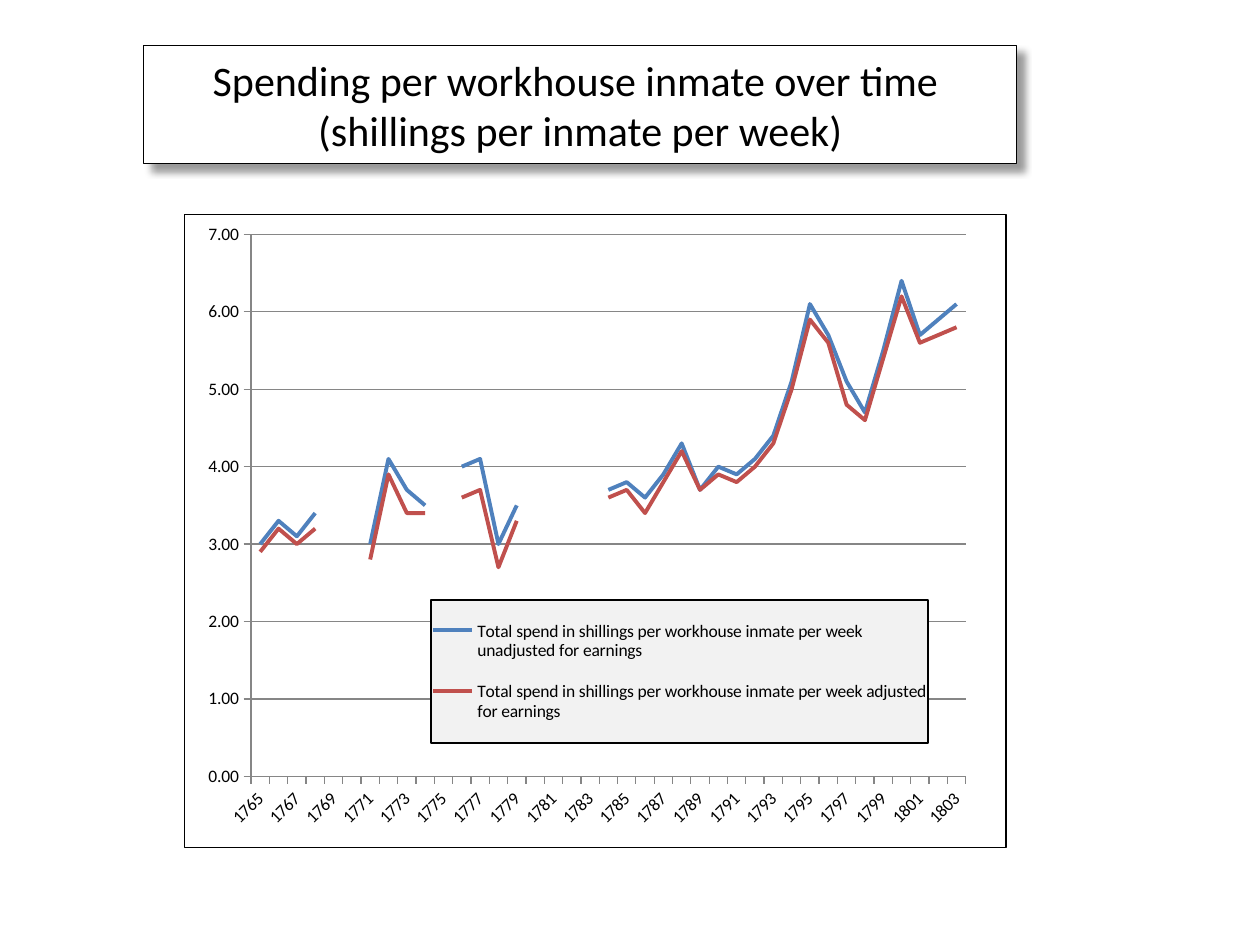
import lxml.etree
import pptx
import pptx.chart.data
import pptx.dml.color
import pptx.enum.chart
import pptx.enum.shapes
import pptx.enum.text
import pptx.oxml
import pptx.oxml.ns
import pptx.util

Inches = pptx.util.Inches
Pt = pptx.util.Pt
RGBColor = pptx.dml.color.RGBColor
qn = pptx.oxml.ns.qn

BLACK = RGBColor(0x00, 0x00, 0x00)
WHITE = RGBColor(0xFF, 0xFF, 0xFF)
GREY = RGBColor(0x86, 0x86, 0x86)
PALE = RGBColor(0xF2, 0xF2, 0xF2)
BLUE = RGBColor(0x4F, 0x81, 0xBD)
RED = RGBColor(0xC0, 0x50, 0x4D)
FONT = "Calibri"

YEARS = [str(year) for year in range(1765, 1804)]
UNADJUSTED = [
    3, 3.3, 3.1, 3.4, None, None, 3, 4.1, 3.7, 3.5,
    None, 4, 4.1, 3, 3.5, None, None, 3, None, 3.7,
    3.8, 3.6, 3.9, 4.3, 3.7, 4, 3.9, 4.1, 4.4, 5.1,
    6.1, 5.7, 5.1, 4.7, 5.5, 6.4, 5.7, 5.9, 6.1,
]
ADJUSTED = [
    2.9, 3.2, 3, 3.2, None, None, 2.8, 3.9, 3.4, 3.4,
    None, 3.6, 3.7, 2.7, 3.3, None, None, 2.8, None, 3.6,
    3.7, 3.4, 3.8, 4.2, 3.7, 3.9, 3.8, 4, 4.3, 5,
    5.9, 5.6, 4.8, 4.6, 5.4, 6.2, 5.6, 5.7, 5.8,
]
SPENDING = [
    ("unadjusted for earnings", UNADJUSTED, BLUE),
    ("adjusted for earnings", ADJUSTED, RED),
]


def manual_layout(bounds, inner=False):
    layout = lxml.etree.Element(qn("c:layout"))
    manual = lxml.etree.SubElement(layout, qn("c:manualLayout"))
    settings = [("layoutTarget", "inner")] if inner else []
    settings += [("xMode", "edge"), ("yMode", "edge"), *zip("xywh", bounds)]
    for name, value in settings:
        lxml.etree.SubElement(manual, qn("c:" + name), val=str(value))
    return layout


def bordered_area(color):
    return pptx.oxml.parse_xml(
        f'<c:spPr {pptx.oxml.ns.nsdecls("c", "a")}>'
        f'<a:solidFill><a:srgbClr val="{color}"/></a:solidFill>'
        f'<a:ln w="{Pt(0.75)}"><a:solidFill><a:srgbClr val="{BLACK}"/>'
        '</a:solidFill></a:ln></c:spPr>'
    )


deck = pptx.Presentation()
deck.slide_width = Inches(10)
deck.slide_height = Inches(7.5)
page = deck.slides.add_slide(deck.slide_layouts[6])

title = page.shapes.add_shape(
    pptx.enum.shapes.MSO_SHAPE.RECTANGLE,
    Inches(1.14), Inches(0.36), Inches(6.93), Inches(0.94),
)
title.fill.solid()
title.fill.fore_color.rgb = WHITE
title.line.color.rgb = BLACK
title.line.width = Pt(0.75)
title.shadow.inherit = False
effects = title.element.spPr.find(qn("a:effectLst"))
effects.append(pptx.oxml.parse_xml(
    f'<a:outerShdw {pptx.oxml.ns.nsdecls("a")} blurRad="{Pt(4)}" '
    f'dist="{Pt(6)}" dir="2700000" algn="tl" rotWithShape="0">'
    f'<a:srgbClr val="{BLACK}"><a:alpha val="40000"/></a:srgbClr></a:outerShdw>'
))
frame = title.text_frame
frame.word_wrap = True
frame.vertical_anchor = pptx.enum.text.MSO_ANCHOR.MIDDLE
para = frame.paragraphs[0]
para.text = "Spending per workhouse inmate over time \v(shillings per inmate per week)"
para.alignment = pptx.enum.text.PP_ALIGN.CENTER
for span in para.runs:
    span.font.name = FONT
    span.font.size = Pt(24)
    span.font.color.rgb = BLACK

data = pptx.chart.data.CategoryChartData(number_format="0.00")
data.categories = YEARS
for basis, values, color in SPENDING:
    data.add_series("Total spend in shillings per workhouse inmate per week " + basis, values)
chart = page.shapes.add_chart(
    pptx.enum.chart.XL_CHART_TYPE.LINE,
    Inches(1.46), Inches(1.7), Inches(6.53), Inches(5.03), data,
).chart
chart.has_title = False
chart.font.name = FONT
chart.font.size = Pt(10)
chart.font.color.rgb = BLACK
chart.element.find(qn("c:txPr")).addprevious(bordered_area(WHITE))

plot = chart.plots[0]
plot.vary_by_categories = False
for series, (basis, values, color) in zip(plot.series, SPENDING):
    series.smooth = False
    series.marker.style = pptx.enum.chart.XL_MARKER_STYLE.NONE
    series.format.line.color.rgb = color
    series.format.line.width = Pt(2.25)

for axis in (chart.category_axis, chart.value_axis):
    axis.major_tick_mark = pptx.enum.chart.XL_TICK_MARK.OUTSIDE
    axis.minor_tick_mark = pptx.enum.chart.XL_TICK_MARK.NONE
    axis.format.line.color.rgb = GREY
    axis.format.line.width = Pt(0.75)
    axis.tick_labels.font.size = Pt(10)

years_xml = chart.category_axis._element
years_xml.find(qn("c:txPr")).find(qn("a:bodyPr")).set("rot", "-2700000")
label_skip = lxml.etree.Element(qn("c:tickLblSkip"), val="2")
years_xml.find(qn("c:noMultiLvlLbl")).addprevious(label_skip)

spend_axis = chart.value_axis
spend_axis.minimum_scale = 0
spend_axis.maximum_scale = 7
spend_axis.major_unit = 1
spend_axis.tick_labels.number_format = "0.00"
spend_axis.tick_labels.number_format_is_linked = False
spend_axis.has_major_gridlines = True
spend_axis.major_gridlines.format.line.color.rgb = GREY
spend_axis.major_gridlines.format.line.width = Pt(0.75)

plot_area = chart.element.find(".//" + qn("c:plotArea"))
for layout in plot_area.findall(qn("c:layout")):
    plot_area.remove(layout)
plot_area.insert(0, manual_layout((0.081, 0.031, 0.87, 0.857), inner=True))

chart.has_legend = True
legend = chart.legend
legend.position = pptx.enum.chart.XL_LEGEND_POSITION.RIGHT
legend.include_in_layout = False
legend.font.size = Pt(10)
legend_xml = legend._element
for layout in legend_xml.findall(qn("c:layout")):
    legend_xml.remove(layout)
legend_xml.find(qn("c:overlay")).addprevious(manual_layout((0.3, 0.609, 0.605, 0.226)))
legend_xml.find(qn("c:txPr")).addprevious(bordered_area(PALE))

deck.save("out.pptx")
